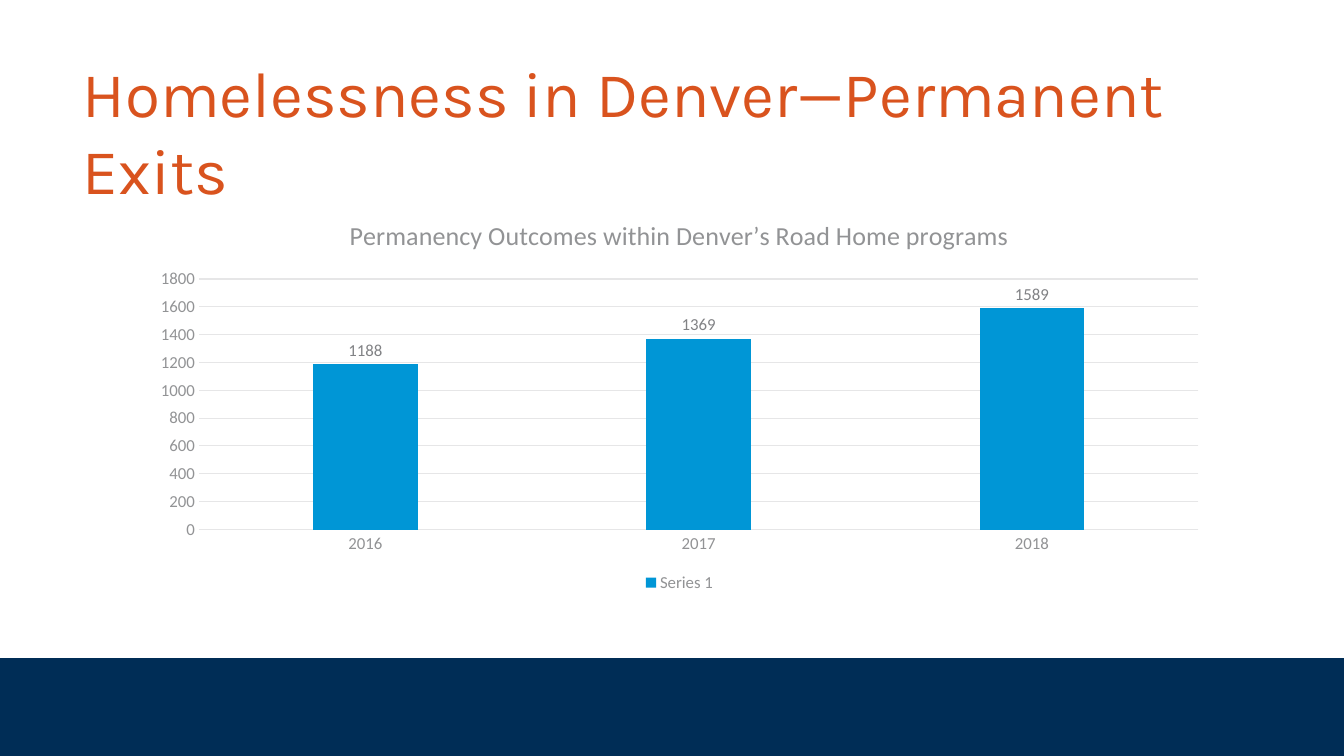
from pptx import Presentation
from pptx import util as u
from pptx.chart.data import CategoryChartData
from pptx.dml.color import RGBColor
from pptx.enum import chart as ch, shapes, text

NAVY = RGBColor(0x00, 0x2D, 0x56)
ORANGE = RGBColor(0xD9, 0x53, 0x1E)
BLUE = RGBColor(0x00, 0x96, 0xD6)
GRAY = RGBColor(0x92, 0x93, 0x95)
DARK_GRAY = RGBColor(0x81, 0x82, 0x85)
PALE_GRAY = RGBColor(0xE6, 0xE6, 0xE7)


def style(font, size, color, name="Calibri"):
    values = {"size": u.Pt(size), "name": name, "bold": False}
    for key, value in values.items():
        setattr(font, key, value)
    font.color.rgb = color


prs = Presentation()
prs.slide_width, prs.slide_height = u.Inches(13.33), u.Inches(7.5)
slide = prs.slides.add_slide(prs.slide_layouts[6])

# Footer band
footer = slide.shapes.add_shape(
    shapes.MSO_SHAPE.RECTANGLE, 0, u.Inches(6.53), prs.slide_width, u.Inches(0.97))
footer.shadow.inherit = False
footer.fill.solid()
footer.fill.fore_color.rgb = NAVY
footer.line.fill.background()

# Heading
heading = slide.shapes.add_textbox(
    u.Inches(0.72), u.Inches(0.59), u.Inches(12.03), u.Inches(1.41)).text_frame
heading.word_wrap = True
heading.vertical_anchor = text.MSO_ANCHOR.MIDDLE
heading_run = heading.paragraphs[0].add_run()
heading_run.text = "Homelessness in Denver—Permanent Exits"
style(heading_run.font, 45.6, ORANGE, "Karla")

# Outcomes by year
outcomes = CategoryChartData()
outcomes.categories = ["2016", "2017", "2018"]
outcomes.add_series("Series 1", [1188, 1369, 1589])
chart = slide.shapes.add_chart(
    ch.XL_CHART_TYPE.COLUMN_CLUSTERED, u.Inches(1.38), u.Inches(1.98),
    u.Inches(10.72), u.Inches(3.94), outcomes).chart
style(chart.font, 12, GRAY)

# Chart title and legend
chart.has_title = True
chart_title = chart.chart_title.text_frame.paragraphs[0].add_run()
chart_title.text = "Permanency Outcomes within Denver’s Road Home programs"
style(chart_title.font, 18.6, GRAY)
chart.has_legend = True
chart.legend.position = ch.XL_LEGEND_POSITION.BOTTOM
chart.legend.include_in_layout = False
style(chart.legend.font, 12, GRAY)

# Axes and gridlines
years, counts = chart.category_axis, chart.value_axis
for axis in (years, counts):
    axis.major_tick_mark = axis.minor_tick_mark = ch.XL_TICK_MARK.NONE
    style(axis.tick_labels.font, 12, GRAY)
counts.minimum_scale, counts.maximum_scale, counts.major_unit = 0, 1800, 200
counts.format.line.fill.background()
for rule in (years.format.line, counts.major_gridlines.format.line):
    rule.color.rgb = PALE_GRAY
    rule.width = u.Pt(0.75)

# Columns and value labels
columns = chart.plots[0]
columns.gap_width, columns.overlap, columns.vary_by_categories = 219, -27, False
columns.series[0].format.fill.solid()
columns.series[0].format.fill.fore_color.rgb = BLUE
labels = columns.series[0].data_labels
labels.show_value = True
labels.position = ch.XL_LABEL_POSITION.OUTSIDE_END
style(labels.font, 12, DARK_GRAY)

prs.save("out.pptx")
